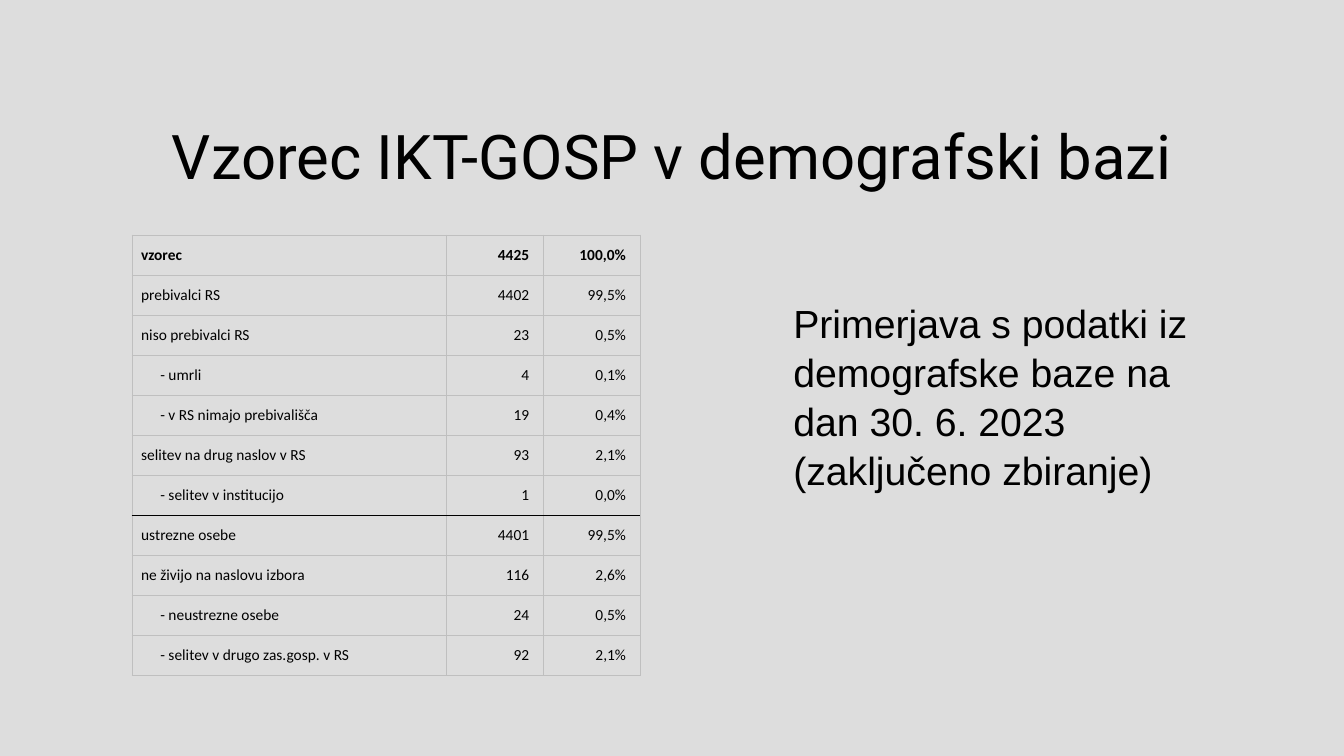
from typing import NamedTuple

from lxml.etree import SubElement
from pptx import Presentation
from pptx.dml.color import RGBColor
from pptx.enum.text import MSO_ANCHOR as Anchor, PP_ALIGN as Align
from pptx.oxml.ns import qn
from pptx.util import Inches, Pt

BLACK = RGBColor(0x00, 0x00, 0x00)
GREY = RGBColor(0xBF, 0xBF, 0xBF)
PAPER = RGBColor(0xDD, 0xDD, 0xDD)

WIDTHS = (3.12, 0.82, 0.14, 0.82, 0.14)
LABEL, COUNT, SHARE = 0, 1, 3
GAPS = (2, 4)
RULED = 7


class Row(NamedTuple):
    label: str
    count: str
    share: str


ROWS = (
    Row("vzorec", "4425", "100,0%"),
    Row("prebivalci RS", "4402", "99,5%"),
    Row("niso prebivalci RS", "23", "0,5%"),
    Row("- umrli", "4", "0,1%"),
    Row("- v RS nimajo prebivališča", "19", "0,4%"),
    Row("selitev na drug naslov v RS", "93", "2,1%"),
    Row("- selitev v institucijo", "1", "0,0%"),
    Row("ustrezne osebe", "4401", "99,5%"),
    Row("ne živijo na naslovu izbora", "116", "2,6%"),
    Row("- neustrezne osebe", "24", "0,5%"),
    Row("- selitev v drugo zas.gosp. v RS", "92", "2,1%"),
)


def write(frame, text: str, *, font: str, size: float, bold: bool = False,
          align=Align.LEFT, spacing: float = 1.0) -> None:
    para = frame.paragraphs[0]
    para.alignment = align
    para.line_spacing = spacing
    run = para.add_run()
    run.text = text
    run.font.name = font
    run.font.size = Pt(size)
    run.font.bold = bold
    run.font.color.rgb = BLACK


def add_box(slide, left: float, top: float, width: float, height: float,
            anchor=Anchor.TOP):
    box = slide.shapes.add_textbox(
        Inches(left), Inches(top), Inches(width), Inches(height))
    frame = box.text_frame
    frame.word_wrap = True
    frame.vertical_anchor = anchor
    return frame


def add_edge(cell, side: str, color: RGBColor | None) -> None:
    props = cell._tc.get_or_add_tcPr()
    edge = SubElement(props, qn(f"a:ln{side}"), w=str(Pt(0.5)))
    if color is None:
        SubElement(edge, qn("a:noFill"))
    else:
        fill = SubElement(edge, qn("a:solidFill"))
        SubElement(fill, qn("a:srgbClr"), val=str(color))


def style_cell(cell, row: int, col: int) -> None:
    cell.margin_left = cell.margin_right = 0
    cell.margin_top = cell.margin_bottom = 0
    cell.vertical_anchor = Anchor.MIDDLE
    add_edge(cell, "L", None if col in GAPS else GREY)
    add_edge(cell, "R", None if col in (COUNT, SHARE) else GREY)
    add_edge(cell, "T", BLACK if row == RULED else GREY)
    add_edge(cell, "B", BLACK if row == RULED - 1 else GREY)
    cell.fill.background()


def add_sample(slide) -> None:
    frame = slide.shapes.add_table(
        len(ROWS), len(WIDTHS),
        Inches(1.31), Inches(2.33), Inches(sum(WIDTHS)), Inches(4.37))
    table = frame.table
    table.first_row = table.horz_banding = False
    for column, width in zip(table.columns, WIDTHS):
        column.width = Inches(width)
    for index, row in enumerate(ROWS):
        for col in range(len(WIDTHS)):
            style_cell(table.cell(index, col), index, col)
        indent = 0.28 if row.label.startswith("-") else 0.09
        table.cell(index, LABEL).margin_left = Inches(indent)
        for col, text in zip((LABEL, COUNT, SHARE), row):
            write(table.cell(index, col).text_frame, text,
                  font="Calibri", size=11, bold=index == 0,
                  align=Align.LEFT if col == LABEL else Align.RIGHT)


def main() -> None:
    deck = Presentation()
    deck.slide_width = Inches(13.33)
    deck.slide_height = Inches(7.5)
    slide = deck.slides.add_slide(deck.slide_layouts[6])
    slide.background.fill.solid()
    slide.background.fill.fore_color.rgb = PAPER

    title = add_box(slide, 0.67, 0.99, 12, 1.1, Anchor.MIDDLE)
    write(title, "Vzorec IKT-GOSP v demografski bazi",
          font="Roboto", size=44, align=Align.CENTER)
    add_sample(slide)
    note = add_box(slide, 7.77, 2.33, 4.57, 4.37)
    note.margin_top = Inches(0.62)
    write(note, "Primerjava s podatki iz demografske baze na dan 30. 6. 2023 "
          "(zaključeno zbiranje)", font="Arial", size=28, spacing=1.04)
    deck.save("out.pptx")


if __name__ == "__main__":
    main()
